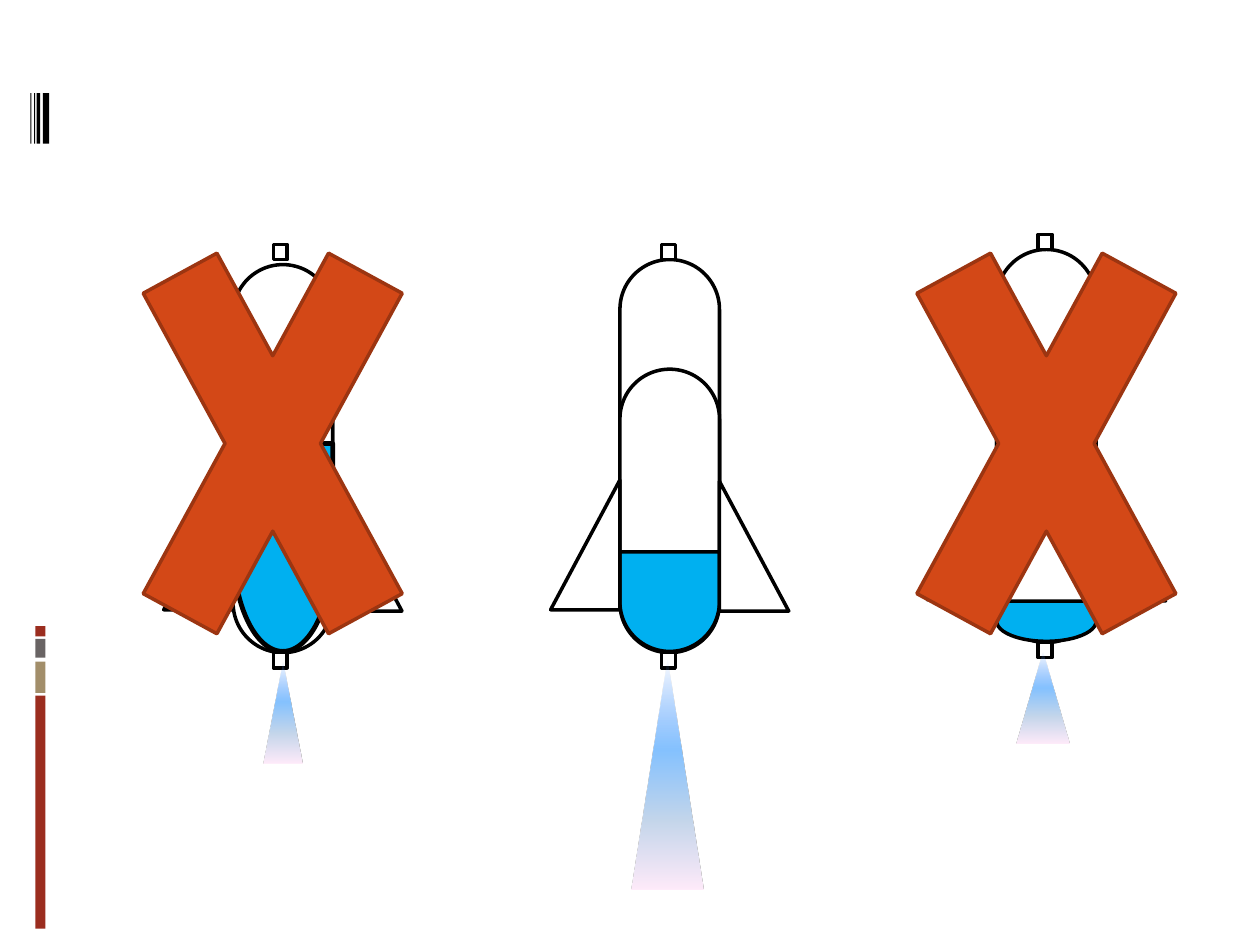
from lxml import etree
from pptx import Presentation
from pptx.dml.color import RGBColor
from pptx.enum.shapes import MSO_SHAPE
from pptx.oxml.ns import qn
from pptx.util import Inches, Pt

RECTANGLE = MSO_SHAPE.RECTANGLE
ROUNDED = MSO_SHAPE.ROUNDED_RECTANGLE
DELAY = MSO_SHAPE.FLOWCHART_DELAY
FIN = MSO_SHAPE.RIGHT_TRIANGLE
TRIANGLE = MSO_SHAPE.ISOSCELES_TRIANGLE
MULTIPLY = MSO_SHAPE.MATH_MULTIPLY

COLORS = {
    "black": "000000", "white": "FFFFFF", "water": "00B0F0",
    "cross": "D34817", "cross_line": "9C3511",
    "red": "9B2D1F", "tan": "A28E6A", "gray": "696464",
}
# position in percent, colour, opacity in percent
JET_STOPS = [(0, "5E9EFF", 0), (40, "85C2FF", 100), (70, "C4D6EB", 100), (100, "FFEBFA", 100)]

BODY_WIDTH, BODY_HEIGHT = 0.79, 2.25
FIN_WIDTH, FIN_HEIGHT = 0.55, 1.03
WATER_BOTTOM = 3.23

ROCKETS = [
    {"left": 4.92, "top": 1.94, "body_top": 0.12, "water": 0.79, "water_line": 2,
     "cap": 0.33, "jet": (0.09, 3.29, 0.57, 1.83)},
    {"left": 1.85, "top": 1.94, "body_top": 0.16, "water": 1.65, "water_line": 2.75,
     "cap": 0.32, "jet": (0.24, 3.31, 0.31, 0.81)},
    {"left": 7.91, "top": 1.86, "body_top": 0.12, "water": 0.32, "water_line": 2,
     "cap": 0.33, "jet": (0.16, 3.31, 0.42, 0.73)},
]


def add_shape(shapes, kind, box, fill, line=None, line_width=2):
    shape = shapes.add_shape(kind, *(Inches(value) for value in box))
    shape.shadow.inherit = False
    shape.fill.solid()
    shape.fill.fore_color.rgb = RGBColor.from_string(COLORS[fill])
    if line:
        shape.line.color.rgb = RGBColor.from_string(COLORS[line])
        shape.line.width = Pt(line_width)
    else:
        shape.line.fill.background()
    return shape


def set_jet_gradient(shape):
    """Fill the shape from a clear top to a pale bottom."""
    shape.fill.gradient()
    gradient = shape._element.spPr.find(qn("a:gradFill"))
    for child in list(gradient):
        gradient.remove(child)
    stops = etree.SubElement(gradient, qn("a:gsLst"))
    for position, color, opacity in JET_STOPS:
        stop = etree.SubElement(stops, qn("a:gs"), pos=str(position * 1000))
        value = etree.SubElement(stop, qn("a:srgbClr"), val=color)
        if opacity < 100:
            etree.SubElement(value, qn("a:alpha"), val=str(opacity * 1000))
    etree.SubElement(gradient, qn("a:lin"), ang=str(90 * 60000), scaled="0")


def add_rocket(slide, left, top, body_top, water, water_line, cap, jet):
    shapes = slide.shapes.add_group_shape().shapes

    def part(kind, x, y, width, height, fill="white", line="black", line_width=2):
        return add_shape(shapes, kind, (left + x, top + y, width, height), fill, line, line_width)

    for y in (body_top, 0.99):
        part(ROUNDED, 0, y, BODY_WIDTH, BODY_HEIGHT).adjustments[0] = 0.5
    part(RECTANGLE, cap, 3.24, 0.11, 0.12)

    # The water is a delay symbol turned a quarter, so its width is the depth.
    tank = part(DELAY, (BODY_WIDTH - water) / 2, WATER_BOTTOM - (water + BODY_WIDTH) / 2,
                water, BODY_WIDTH, "water", line_width=water_line)
    tank.rotation = 90

    part(FIN, BODY_WIDTH, 1.88, FIN_WIDTH, FIN_HEIGHT)
    left_fin = part(FIN, -FIN_WIDTH, 1.87, FIN_WIDTH, FIN_HEIGHT)
    left_fin._element.spPr.xfrm.set("flipH", "1")
    part(RECTANGLE, cap, 0, 0.11, 0.12)
    set_jet_gradient(part(TRIANGLE, *jet, line=None))


def add_side_marks(slide, left, top):
    """Draw the barcode at the top and the coloured bars further down."""
    for x, width in ((0.10, 0.05), (0.05, 0.03), (0.03, 0.01), (0, 0.01)):
        add_shape(slide.shapes, RECTANGLE, (left + x, top, width, 0.4), "black")
    for y, height, color in ((4.78, 1.85, "red"), (4.51, 0.25, "tan"),
                             (4.33, 0.15, "gray"), (4.23, 0.08, "red")):
        add_shape(slide.shapes, RECTANGLE, (left + 0.04, top + y, 0.08, height), color)


def main():
    presentation = Presentation()
    presentation.slide_width, presentation.slide_height = Inches(10), Inches(7.5)
    slide = presentation.slides.add_slide(presentation.slide_layouts[6])
    add_side_marks(slide, 0.24, 0.74)
    for rocket in ROCKETS:
        add_rocket(slide, **rocket)
    for left in (6.89, 0.75):
        add_shape(slide.shapes, MULTIPLY, (left, 0.92, 2.83, 5.2), "cross", "cross_line")
    presentation.save("out.pptx")


if __name__ == "__main__":
    main()
